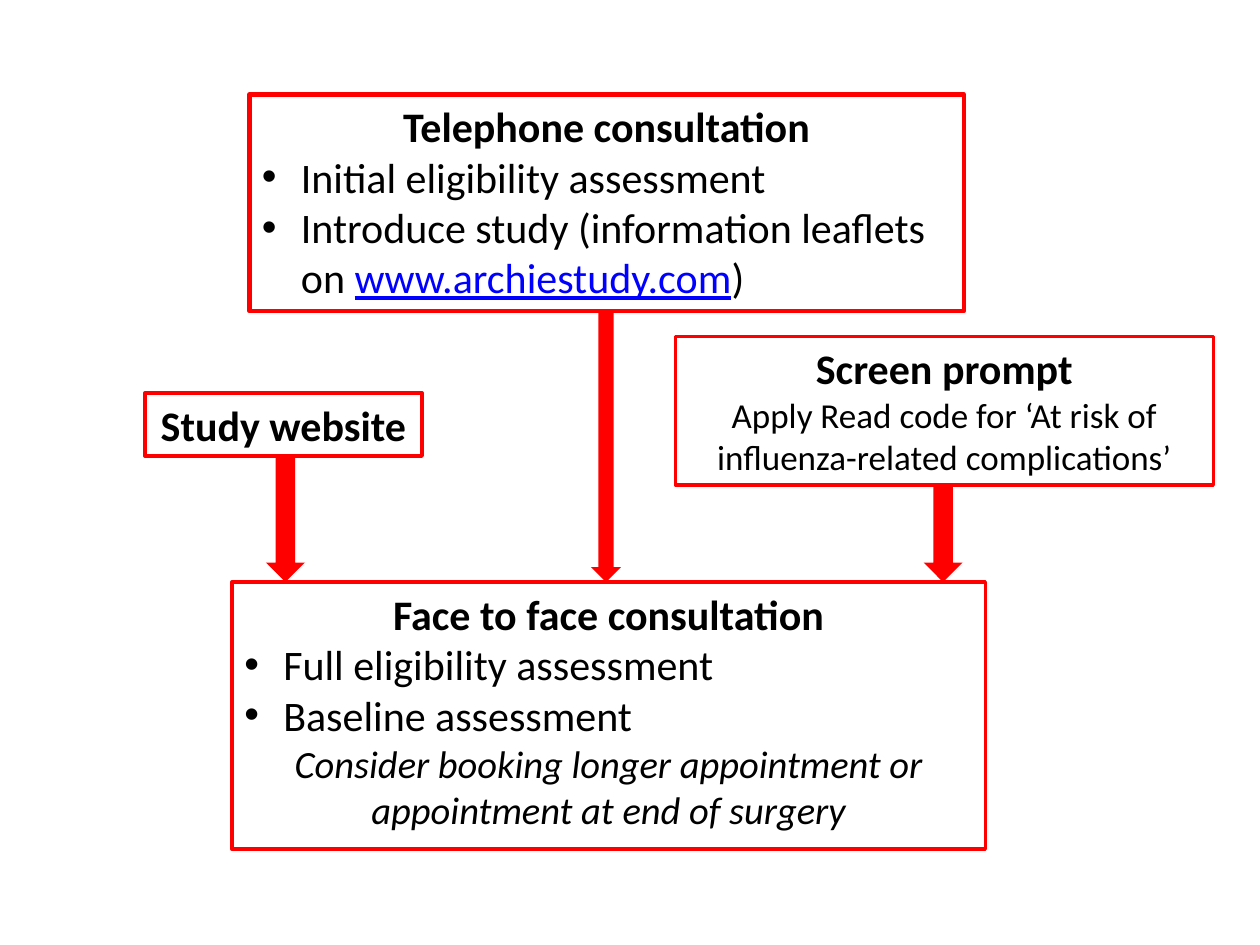
from dataclasses import dataclass

import pptx
import pptx.dml.color
import pptx.enum.shapes
import pptx.enum.text
import pptx.oxml
import pptx.oxml.ns
import pptx.util
from pptx.util import Inches

Align = pptx.enum.text.PP_ALIGN
Preset = pptx.enum.shapes.MSO_SHAPE
RGBColor = pptx.dml.color.RGBColor


@dataclass(frozen=True)
class Theme:
    font: str = "Calibri"
    text: RGBColor = RGBColor(0, 0, 0)
    accent: RGBColor = RGBColor(255, 0, 0)
    address: RGBColor = RGBColor(0, 0, 255)
    body_size: int = 24
    remark_size: int = 22
    detail_size: int = 20
    bullet_indent: float = 0.31


class FlowSlide:
    def __init__(self, slide, theme):
        self.slide = slide
        self.theme = theme

    def box(self, left, top, width, height, title, line_width=2):
        """Add an outlined box with a bold title and return its text frame."""
        shape = self.slide.shapes.add_shape(
            Preset.RECTANGLE, Inches(left), Inches(top), Inches(width), Inches(height))
        shape.shadow.inherit = False
        shape.fill.background()
        shape.line.color.rgb = self.theme.accent
        shape.line.width = pptx.util.Pt(line_width)
        frame = shape.text_frame
        frame.word_wrap = True
        frame.vertical_anchor = pptx.enum.text.MSO_ANCHOR.TOP
        self.style(frame.paragraphs[0], title, self.theme.body_size, bold=True)
        return frame

    def style(self, paragraph, text, size, bold=False, italic=False, align=Align.CENTER):
        paragraph.alignment = align
        paragraph.add_run().text = text
        font = paragraph.font
        font.name = self.theme.font
        font.size = pptx.util.Pt(size)
        font.bold = bold
        font.italic = italic
        font.color.rgb = self.theme.text

    def note(self, frame, text, size, italic=False):
        self.style(frame.add_paragraph(), text, size, italic=italic)

    def bullet(self, frame, text):
        paragraph = frame.add_paragraph()
        properties = paragraph._p.get_or_add_pPr()
        indent = Inches(self.theme.bullet_indent)
        properties.set("marL", str(indent))
        properties.set("indent", str(-indent))
        namespace = pptx.oxml.ns.nsdecls("a")
        for element in ('<a:buFont {} typeface="Arial"/>', '<a:buChar {} char="•"/>'):
            properties.append(pptx.oxml.parse_xml(element.format(namespace)))
        self.style(paragraph, text, self.theme.body_size, align=Align.LEFT)
        return paragraph

    def address(self, paragraph, text):
        run = paragraph.add_run()
        run.text = text
        run.font.underline = True
        run.font.color.rgb = self.theme.address

    def down_arrow(self, left, top, width, bottom):
        shape = self.slide.shapes.add_shape(
            Preset.DOWN_ARROW, Inches(left), Inches(top), Inches(width), Inches(bottom - top))
        shape.shadow.inherit = False
        shape.fill.solid()
        shape.fill.fore_color.rgb = self.theme.accent
        shape.line.fill.background()


def main():
    presentation = pptx.Presentation()
    presentation.slide_width = Inches(10)
    presentation.slide_height = Inches(7.5)
    theme = Theme()
    flow = FlowSlide(presentation.slides.add_slide(presentation.slide_layouts[6]), theme)

    consultation_top = 4.62
    face_to_face = flow.box(1.84, consultation_top, 5.98, 2.12, "Face to face consultation")
    flow.bullet(face_to_face, "Full eligibility assessment")
    flow.bullet(face_to_face, "Baseline assessment")
    for remark in ("Consider booking longer appointment or", "appointment at end of surgery"):
        flow.note(face_to_face, remark, theme.remark_size, italic=True)

    telephone = flow.box(1.98, 0.75, 5.67, 1.72, "Telephone consultation", line_width=2.5)
    flow.bullet(telephone, "Initial eligibility assessment")
    introduction = flow.bullet(telephone, "Introduce study (information leaflets on ")
    flow.address(introduction, "www.archiestudy.com")
    introduction.add_run().text = ")"

    flow.box(1.15, 3.12, 2.2, 0.5, "Study website")

    prompt = flow.box(5.36, 2.67, 4.27, 1.18, "Screen prompt")
    flow.note(prompt, "Apply Read code for ‘At risk of influenza-related complications’",
              theme.detail_size)

    for left, top, width in ((4.69, 2.47, 0.24), (2.11, 3.62, 0.31), (7.33, 3.85, 0.31)):
        flow.down_arrow(left, top, width, consultation_top)

    presentation.save("out.pptx")


if __name__ == "__main__":
    main()
